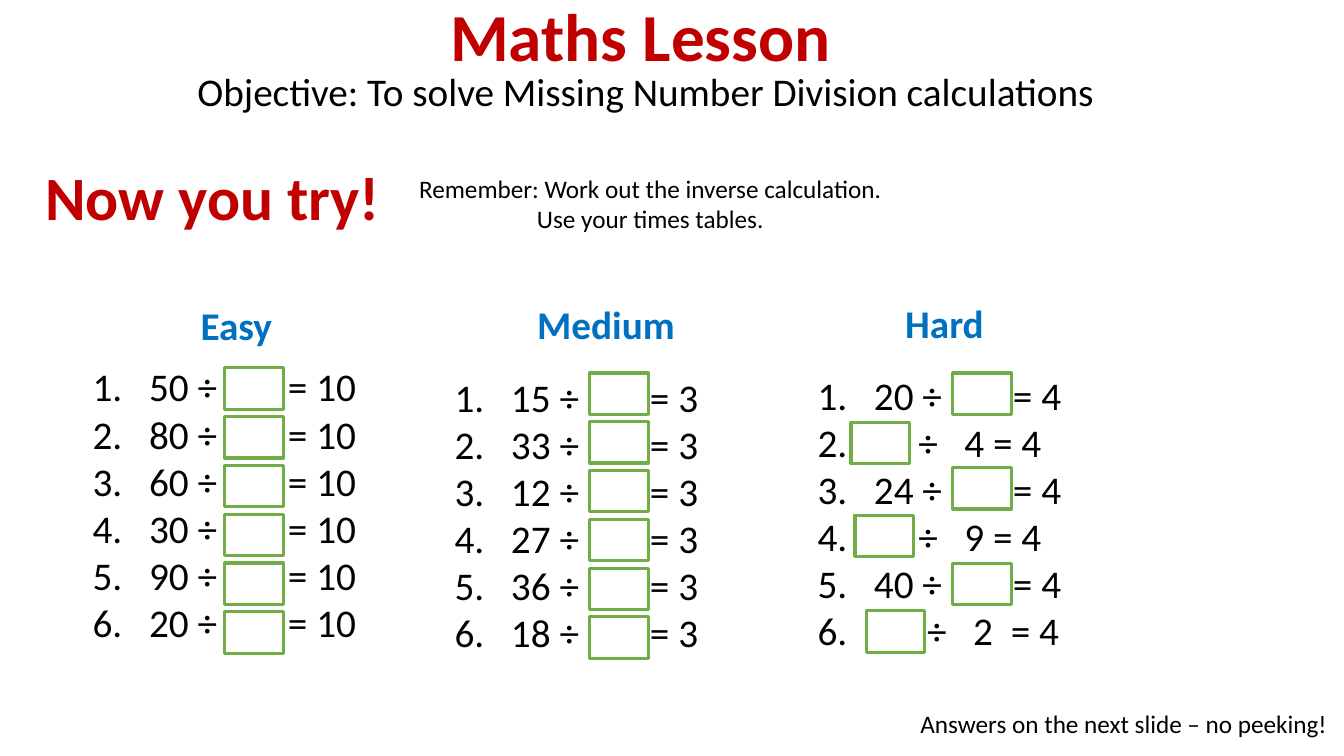
from lxml import etree
from pptx import Presentation
from pptx.dml.color import RGBColor
from pptx.enum import shapes, text
from pptx.oxml import ns
from pptx.util import Inches, Pt

RED = RGBColor(0xC0, 0x00, 0x00)
BLUE = RGBColor(0x00, 0x70, 0xC0)
GREEN = RGBColor(0x70, 0xAD, 0x47)
BLACK = RGBColor(0x00, 0x00, 0x00)
WHITE = RGBColor(0xFF, 0xFF, 0xFF)

FONT = "Calibri"
SUM_SIZE = 28
SPACE_WIDTH = 0.226 * SUM_SIZE  # points
ANSWER_GAP = 8  # width of the answer space, in spaces
ROW_PITCH = 0.484

# A number inside a sum is a gap of that many space widths.
EASY = [(f"{n} ÷", ANSWER_GAP, "= 10") for n in (50, 80, 60, 30, 90, 20)]
MEDIUM = [(f"{n} ÷", ANSWER_GAP, "= 3") for n in (15, 33, 12, 27, 36, 18)]
HARD = [
    ("20 ÷", ANSWER_GAP, "= 4"),
    (5, "÷", 3, "4 = 4"),
    ("24 ÷", ANSWER_GAP, "= 4"),
    (5, "÷", 3, "9 = 4"),
    ("40 ÷", ANSWER_GAP, "= 4"),
    (6, "÷", 3, "2", 2, "= 4"),
]


def answer_column(left, top):
    return [(left, top + row * ROW_PITCH) for row in range(6)]


HARD_ANSWERS = [(9.45, 3.7), (8.44, 4.19), (9.45, 4.64),
                (8.48, 5.11), (9.45, 5.59), (8.59, 6.06)]

# heading, its place, sums, their place, answer boxes
LEVELS = [
    ("Easy", (1.89, 2.94, 0.92, 0.57), EASY, (0.82, 3.55),
     answer_column(2.23, 3.65)),
    ("Medium", (5.23, 2.93, 1.58, 0.57), MEDIUM, (4.41, 3.65),
     answer_column(5.85, 3.7)),
    ("Hard", (8.88, 2.92, 0.99, 0.57), HARD, (8.01, 3.63), HARD_ANSWERS),
]


def add_span(para, words, size, color=BLACK, bold=False):
    span = para.add_run()
    span.text = words
    span.font.name = FONT
    span.font.size = Pt(size)
    span.font.bold = bold
    span.font.color.rgb = color
    return span


def add_gap(para, spaces):
    """Add one space, tracked out to the width of several."""
    span = add_span(para, " ", SUM_SIZE)
    tracking = round((spaces - 1) * SPACE_WIDTH * 100)
    span.font._element.set("spc", str(tracking))


def add_box(page, place, wrap=True):
    box = page.shapes.add_textbox(*map(Inches, place))
    box.text_frame.word_wrap = wrap
    return box.text_frame


def add_label(page, place, lines, size, color=BLACK, bold=False,
              align=text.PP_ALIGN.LEFT, wrap=False):
    frame = add_box(page, place, wrap)
    for index, line in enumerate(lines):
        para = frame.add_paragraph() if index else frame.paragraphs[0]
        para.alignment = align
        add_span(para, line, size, color, bold)
    return frame


def number_paragraph(para):
    props = para._p.get_or_add_pPr()
    props.set("marL", str(Inches(0.56)))
    props.set("indent", str(-Inches(0.56)))
    etree.SubElement(props, ns.qn("a:buFont"), typeface="+mj-lt")
    etree.SubElement(props, ns.qn("a:buAutoNum"), type="arabicPeriod")


def add_sums(page, left, top, sums):
    frame = add_box(page, (left, top, 2.88, 4.17))
    for index, parts in enumerate(sums):
        para = frame.add_paragraph() if index else frame.paragraphs[0]
        number_paragraph(para)
        for part in parts:
            if isinstance(part, int):
                add_gap(para, part)
            else:
                add_span(para, part, SUM_SIZE)


def add_answer_box(page, left, top):
    box = page.shapes.add_shape(shapes.MSO_SHAPE.RECTANGLE, Inches(left),
                                Inches(top), Inches(0.58), Inches(0.41))
    box.shadow.inherit = False
    box.fill.solid()
    box.fill.fore_color.rgb = WHITE
    box.line.color.rgb = GREEN
    box.line.width = Pt(2.25)


def add_header(page):
    title = add_label(page, (0.68, -0.33, 11.5, 1.45), ["Maths Lesson "], 48,
                      RED, True, text.PP_ALIGN.CENTER, wrap=True)
    title.vertical_anchor = text.MSO_ANCHOR.MIDDLE
    title.paragraphs[0].line_spacing = 0.9
    objective = add_label(
        page, (1.86, 0.67, 11.5, 0.62),
        ["Objective: To solve Missing Number Division calculations"],
        28, wrap=True)
    objective.paragraphs[0].line_spacing = 0.9
    objective.paragraphs[0].space_before = Pt(10)


def main():
    deck = Presentation()
    deck.slide_width, deck.slide_height = Inches(13.33), Inches(7.5)
    page = deck.slides.add_slide(deck.slide_layouts[6])

    add_header(page)
    add_label(page, (0.35, 1.53, 3.56, 0.84), ["Now you try!"], 44, RED, True)
    add_label(page, (4.03, 1.67, 4.84, 0.71),
              ["Remember: Work out the inverse calculation.",
               "Use your times tables."], 18, align=text.PP_ALIGN.CENTER)
    for heading, place, sums, corner, answers in LEVELS:
        add_label(page, place, [heading], 28, BLUE, True)
        for answer in answers:
            add_answer_box(page, *answer)
        add_sums(page, *corner, sums)
    add_label(page, (9.03, 6.98, 4.29, 0.4),
              ["Answers on the next slide – no peeking!"], 18)

    deck.save("out.pptx")


if __name__ == "__main__":
    main()
